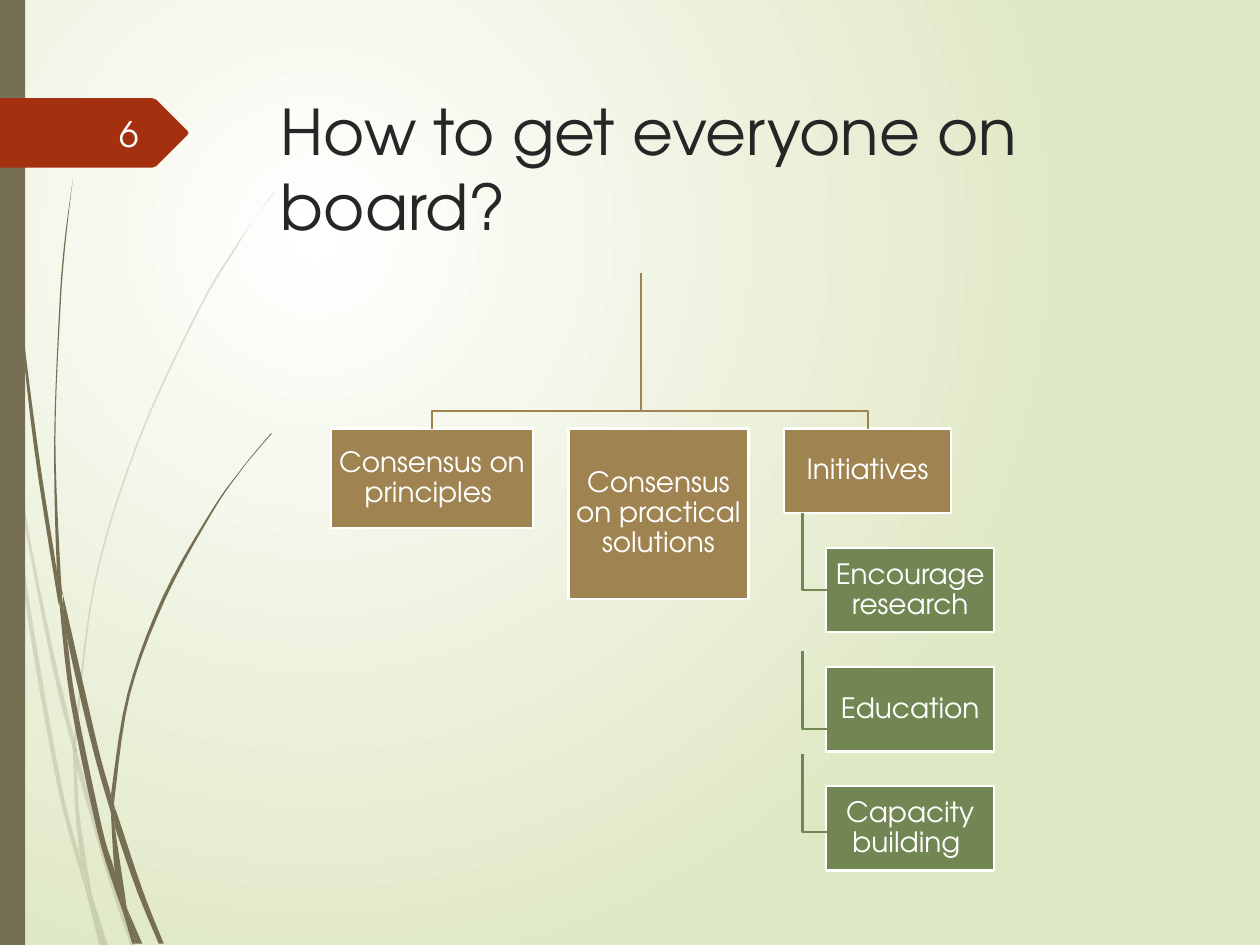
from lxml import etree
from pptx import Presentation
from pptx.dml.color import RGBColor
from pptx.enum.shapes import MSO_SHAPE
from pptx.enum.text import MSO_ANCHOR, MSO_AUTO_SIZE, PP_ALIGN
from pptx.oxml.ns import qn
from pptx.util import Cm, Pt

RECT = MSO_SHAPE.RECTANGLE
TOP, MIDDLE = MSO_ANCHOR.TOP, MSO_ANCHOR.MIDDLE
LEFT, CENTER, RIGHT = PP_ALIGN.LEFT, PP_ALIGN.CENTER, PP_ALIGN.RIGHT
FIXED = MSO_AUTO_SIZE.NONE
FONT = "TeX Gyre Adventor"
STEM, TAN, GREEN, RED = "766F54", "9F8351", "728653", "A53010"
WHITE, DARK = "FFFFFF", "262626"
hue = RGBColor.from_string

deck = Presentation()
deck.slide_width, deck.slide_height = Cm(25.4), Cm(19.05)
slide = deck.slides.add_slide(deck.slide_layouts[5])
shapes = slide.shapes

back = slide.background.fill
back.gradient()
for stop, tint in zip(back.gradient_stops, (WHITE, "DFE8C4")):
    stop.color.rgb = hue(tint)
grad = slide.background._cSld.find(".//" + qn("a:gradFill"))
grad.remove(grad.find(qn("a:lin")))
ring = etree.SubElement(grad, qn("a:path"), path="circle")
etree.SubElement(ring, qn("a:fillToRect"), l="50000", t="50000", r="100000", b="100000")


def trace(points, fill=None, line=None):
    spots = [(Cm(x), Cm(y)) for x, y in points]
    pen = shapes.build_freeform(*spots[0])
    pen.add_line_segments(spots[1:], close=fill is not None)
    form = pen.convert_to_shape()
    form.shadow.inherit = False
    if fill:
        form.fill.solid()
        form.fill.fore_color.rgb = hue(fill)
        form.line.fill.background()
    else:
        form.fill.background()
        form.line.color.rgb = hue(line)
        form.line.width = Pt(1.25)
    return form


def write(frame, text, size, color, align, anchor):
    frame.text = text
    frame.word_wrap = True
    frame.auto_size = FIXED
    frame.vertical_anchor = anchor
    para = frame.paragraphs[0]
    para.alignment = align
    para.font.name, para.font.size = FONT, Pt(size)
    para.font.color.rgb = hue(color)
    return para


# Each blade is two edges, out and back, in hundredths of an inch.
pale = [
    ([(0, 282), (6, 322), (8, 350)], [(7, 344), (0, 299)]),
    ([(10, 345), (25, 433), (43, 520), (59, 586)],
     [(59, 599), (40, 522), (12, 376), (10, 355)]),
    ([(61, 596), (64, 607), (88, 692), (108, 751)],
     [(104, 751), (85, 694), (61, 610)]),
    ([(73, 711), (86, 751)], [(83, 751), (73, 711)]),
    ([(8, 350), (12, 376), (22, 469), (48, 619), (64, 683), (70, 714)],
     [(64, 693), (45, 621), (19, 470), (8, 350)]),
    ([(58, 599), (61, 610), (63, 646), (73, 711)],
     [(67, 692), (64, 683), (60, 646), (58, 599)]),
    ([(59, 586), (59, 584), (75, 461), (110, 348), (158, 244), (186, 197),
      (201, 175), (217, 153)],
     [(217, 154), (201, 175), (187, 198), (159, 245), (111, 349), (76, 462),
      (61, 584), (61, 596)]),
    ([(70, 714), (82, 751)], [(79, 751), (70, 714)]),
    ([(59, 586), (61, 596), (61, 610)], [(61, 608), (58, 599)]),
    ([(65, 683), (67, 692), (73, 711), (83, 751)],
     [(82, 751), (70, 714), (69, 707), (65, 683)]),
]
deep = [
    ([(3, 0), (4, 48), (6, 109), (15, 232), (30, 355), (45, 453), (47, 481)],
     [(46, 477), (27, 355), (14, 233), (5, 110), (3, 48), (2, 0)]),
    ([(50, 472), (77, 590), (88, 631), (88, 645)],
     [(88, 645), (73, 592), (53, 505), (50, 472)]),
    ([(91, 641), (94, 649), (113, 706), (130, 749)],
     [(126, 749), (109, 708), (91, 656)]),
    ([(47, 477), (53, 505), (60, 556), (81, 657), (91, 691), (97, 722)],
     [(92, 708), (77, 659), (56, 557), (47, 477)]),
    ([(58, 141), (51, 193), (47, 245), (43, 349), (45, 449), (49, 472)],
     [(50, 472), (48, 453), (44, 349), (48, 245), (52, 193), (58, 141)]),
    ([(100, 719), (113, 749)], [(110, 749), (100, 719)]),
    ([(45, 449), (49, 472), (53, 505)], [(47, 477), (45, 453)]),
    ([(88, 631), (101, 551), (129, 474), (168, 405), (191, 373), (203, 358),
      (215, 344)],
     [(216, 344), (203, 359), (191, 374), (169, 406), (131, 476), (103, 552),
      (91, 633), (91, 641)]),
    ([(97, 722), (108, 749)], [(105, 749), (97, 722)]),
    ([(88, 645), (90, 651), (91, 656), (100, 716), (100, 719)],
     [(96, 706), (91, 691), (88, 645)]),
    ([(88, 631), (91, 641), (91, 656)], [(90, 651), (88, 645)]),
    ([(91, 691), (96, 706), (100, 719), (110, 749)],
     [(108, 749), (97, 722), (96, 717), (91, 691)]),
]
for blades, alpha in ((pale, "20000"), (deep, "100000")):
    for edges in blades:
        rim = []
        for edge in edges:
            ends = [edge[0], *edge, edge[-1]]
            for a, b, c, d in zip(ends, ends[1:], ends[2:], ends[3:]):
                for t in (0, 0.2, 0.4, 0.6, 0.8):
                    rim.append([0.0127 * (2 * q + (r - p) * t
                                + (2 * p - 5 * q + 4 * r - s) * t ** 2
                                + (3 * q - p - 3 * r + s) * t ** 3)
                                for p, q, r, s in zip(a, b, c, d)])
            rim.append([0.0254 * v for v in edge[-1]])
        blade = trace(rim, fill=STEM)
        tone = blade._element.spPr.find(".//" + qn("a:srgbClr"))
        etree.SubElement(tone, qn("a:alpha"), val=alpha)

bar = shapes.add_shape(RECT, 0, 0, Cm(0.51), Cm(19.05))
bar.shadow.inherit = False
bar.fill.solid()
bar.fill.fore_color.rgb = hue(STEM)
bar.line.fill.background()

trace([(0, 1.98), (3.07, 1.98), (3.15, 2.01), (3.78, 2.64), (3.8, 2.68),
       (3.78, 2.72), (3.15, 3.35), (3.07, 3.38), (0, 3.38)], fill=RED)

title = shapes.title
title.left, title.top, title.width, title.height = Cm(5.41), Cm(1.73), Cm(18.31), Cm(3.56)
write(title.text_frame, "How to get everyone on board?", 36, DARK, LEFT, TOP)
num = shapes.add_textbox(Cm(1.42), Cm(2.18), Cm(1.63), Cm(1.02))
write(num.text_frame, "6", 20, "FEFFFF", RIGHT, MIDDLE)

boxes = [
    ("Consensus on principles ", 6.68, 8.64, 4.06, 2.01, TAN),
    ("Consensus on practical solutions", 11.46, 8.64, 3.63, 3.43, TAN),
    ("Initiatives", 15.8, 8.64, 3.38, 1.7, TAN),
]
for i, text in enumerate(("Encourage research", "Education", "Capacity building ")):
    boxes.append((text, 16.66, 11.05 + 2.4 * i, 3.38, 1.7, GREEN))
for text, x, y, w, h, tint in boxes:
    box = shapes.add_shape(RECT, Cm(x), Cm(y), Cm(w), Cm(h))
    box.shadow.inherit = False
    box.fill.solid()
    box.fill.fore_color.rgb = hue(tint)
    box.line.color.rgb = hue(WHITE)
    box.line.width = Pt(1.25)
    frame = box.text_frame
    frame.margin_left = frame.margin_right = Cm(0.03)
    frame.margin_top = frame.margin_bottom = Cm(0.03)
    write(frame, text, 16, WHITE, CENTER, MIDDLE).line_spacing = 0.9

for x in (17.5, 8.71):
    trace([(12.93, 5.51), (12.93, 8.28), (x, 8.28), (x, 8.64)], line=TAN)
for y in (10.34, 13.13, 15.21):
    trace([(16.18, y), (16.18, y + 1.56), (16.68, y + 1.56)], line=GREEN)

deck.save("out.pptx")
